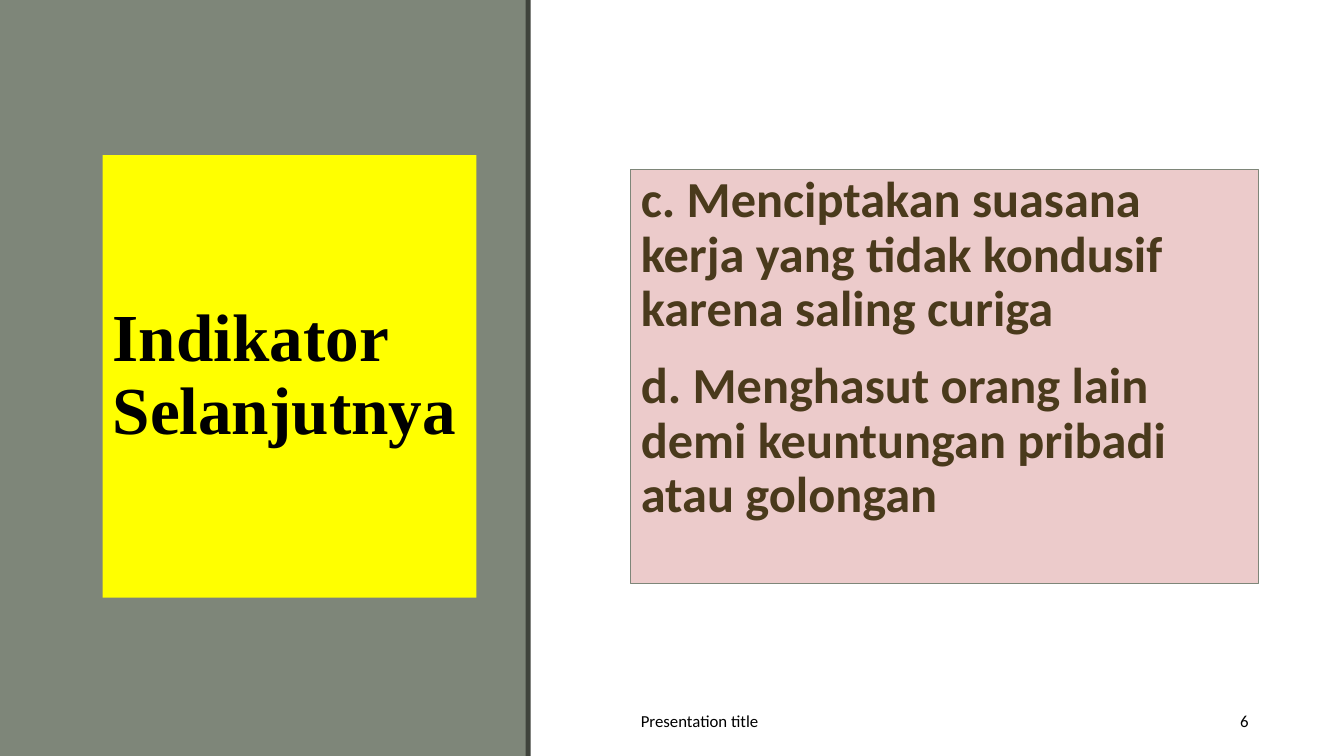
import pptx
import pptx.util
import pptx.dml.color
import pptx.enum.shapes
import pptx.enum.text

Cm = pptx.util.Cm
Pt = pptx.util.Pt
RGBColor = pptx.dml.color.RGBColor
ALIGN = pptx.enum.text.PP_ALIGN
ANCHOR = pptx.enum.text.MSO_ANCHOR

SAGE = RGBColor(0x7E, 0x86, 0x79)
DARK_SAGE = RGBColor(0x3F, 0x43, 0x3C)
YELLOW = RGBColor(0xFF, 0xFF, 0x00)
PINK = RGBColor(0xEC, 0xCB, 0xCB)
BROWN = RGBColor(0x4A, 0x3A, 0x1C)
BLACK = RGBColor(0x00, 0x00, 0x00)

SLIDE_WIDTH, SLIDE_HEIGHT = Cm(33.87), Cm(19.05)
PANEL_WIDTH = Cm(13.31)
STRIP_WIDTH = Cm(0.13)
NUMBER_WIDTH = Cm(2.18)
TITLE_BOX = Cm(2.59), Cm(3.91), Cm(9.42), Cm(11.15)
BODY_BOX = Cm(15.9), Cm(4.27), Cm(15.82), Cm(10.44)
FOOTER_BOX = Cm(15.9), Cm(17.65), Cm(15.82), Cm(1.02)

INDICATORS = [
    "c. Menciptakan suasana kerja yang tidak kondusif karena saling curiga",
    "d. Menghasut orang lain demi keuntungan pribadi atau golongan",
]


def add_rectangle(slide, box, fill, line=None):
    """Add a flat rectangle, outlined only when a line colour is given."""
    shape = slide.shapes.add_shape(pptx.enum.shapes.MSO_SHAPE.RECTANGLE, *box)
    shape.shadow.inherit = False
    shape.fill.solid()
    shape.fill.fore_color.rgb = fill
    if line is None:
        shape.line.fill.background()
    else:
        shape.line.color.rgb = line
        shape.line.width = Pt(0.75)
    return shape


def write_text(shape, texts, size, font_name, color, bold=False,
               anchor=ANCHOR.MIDDLE, alignment=ALIGN.LEFT, line_spacing=1.0):
    """Write one paragraph per text, all in the same style."""
    frame = shape.text_frame
    frame.word_wrap = True
    frame.vertical_anchor = anchor
    for index, text in enumerate(texts):
        paragraph = frame.add_paragraph() if index else frame.paragraphs[0]
        paragraph.text = text
        paragraph.alignment = alignment
        paragraph.line_spacing = line_spacing
        paragraph.space_before = Pt(10 if index else 0)
        paragraph.space_after = Pt(6 if len(texts) > 1 else 0)
        paragraph.font.size = Pt(size)
        paragraph.font.name = font_name
        paragraph.font.bold = bold
        paragraph.font.color.rgb = color


def add_side_panel(slide, left, top, width, height):
    """Draw the panel with a dark strip centred on its right edge."""
    add_rectangle(slide, (left, top, width, height), SAGE)
    strip_left = left + width - STRIP_WIDTH // 2
    add_rectangle(slide, (strip_left, top, STRIP_WIDTH, height), DARK_SAGE)


def add_title(slide, box):
    """Place the title on its yellow block."""
    write_text(add_rectangle(slide, box, YELLOW), ["Indikator Selanjutnya"],
               48, "Times New Roman", BLACK, bold=True, line_spacing=0.9)


def add_indicators(slide, box):
    """Place the list of indicators on its outlined block."""
    write_text(add_rectangle(slide, box, PINK, SAGE), INDICATORS,
               36, "Calibri", BROWN, bold=True, anchor=ANCHOR.TOP, line_spacing=0.9)


def add_footer(slide, left, top, width, height):
    """Place the footer text at the left and the slide number at the right."""
    footer = slide.shapes.add_textbox(left, top, Cm(11.43), height)
    write_text(footer, ["Presentation title"], 12, "Calibri", BLACK)
    number = slide.shapes.add_textbox(left + width - NUMBER_WIDTH, top, NUMBER_WIDTH, height)
    write_text(number, ["6"], 12, "Calibri", BLACK, alignment=ALIGN.RIGHT)


def main():
    """Build the slide and save it."""
    presentation = pptx.Presentation()
    presentation.slide_width = SLIDE_WIDTH
    presentation.slide_height = SLIDE_HEIGHT
    slide = presentation.slides.add_slide(presentation.slide_layouts[6])
    add_side_panel(slide, 0, 0, PANEL_WIDTH, SLIDE_HEIGHT)
    add_title(slide, TITLE_BOX)
    add_indicators(slide, BODY_BOX)
    add_footer(slide, *FOOTER_BOX)
    presentation.save("out.pptx")


if __name__ == "__main__":
    main()
